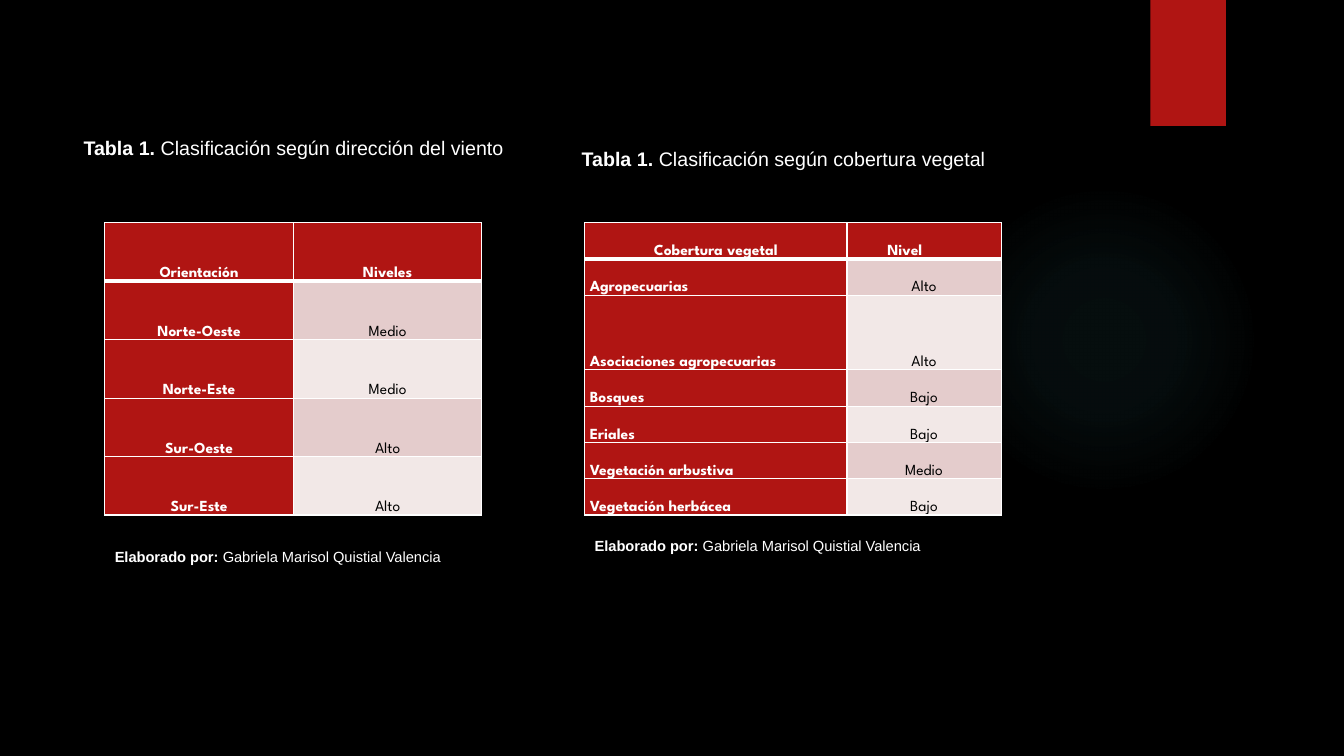
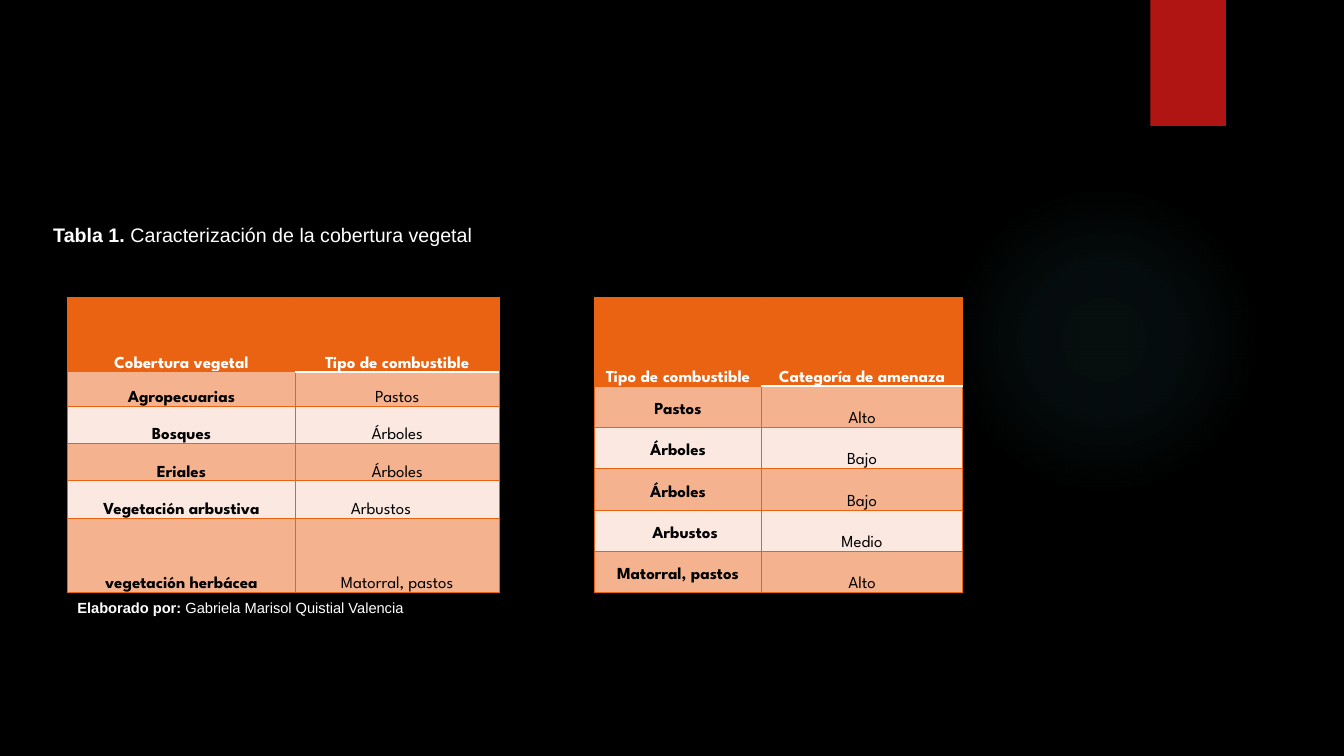
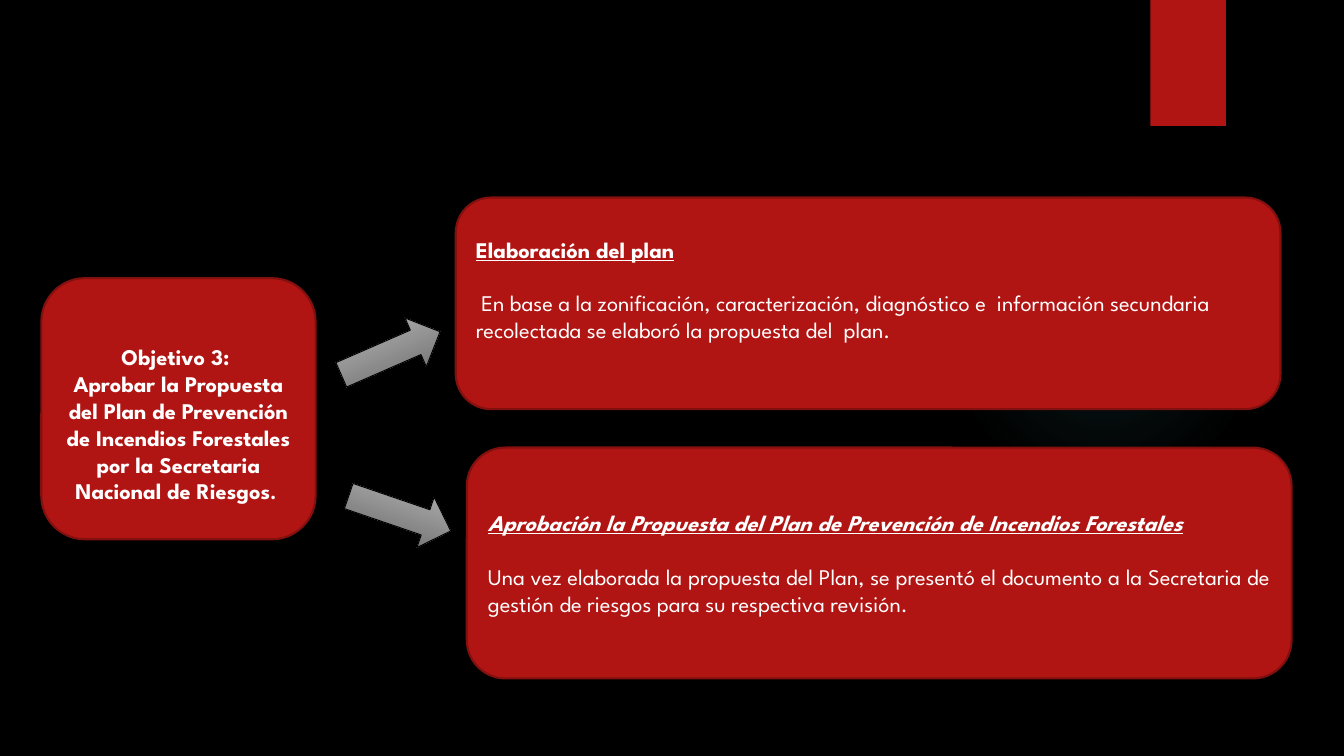
import pptx
import pptx.dml.color
import pptx.enum.shapes
import pptx.enum.text
import pptx.oxml
import pptx.oxml.ns
import pptx.util

PX = 9144  # EMU per px, 100 px to the inch
BLACK, WHITE = "000000", "FFFFFF"
RED, DARK_RED, ORANGE = "B01513", "82100E", "EA6312"
BODY_FONT, CAPTION_FONT = "League Spartan", "Arial"
AUTHOR = "Gabriela Marisol Quistial Valencia"

SHAPE = pptx.enum.shapes.MSO_SHAPE
ALIGN = pptx.enum.text.PP_ALIGN
ANCHOR = pptx.enum.text.MSO_ANCHOR

RED_TABLE = dict(
    header=RED, label_fills=(RED, RED), value_fills=("E4CCCC", "F2E8E7"),
    label_color=WHITE, size=11, border=(WHITE, 1), rule=(WHITE, 3), rule_from=0)
ORANGE_TABLE = dict(
    header=ORANGE, label_fills=("F4B28E", "FBE8E1"),
    value_fills=("F4B28E", "FBE8E1"), label_color=BLACK, size=12,
    border=(ORANGE, 0.75), rule=(WHITE, 1.5), rule_from=1)


def px(n):
    return pptx.util.Emu(round(n * PX))


def rgb(color):
    return pptx.dml.color.RGBColor.from_string(color)


def add_run(p, text, size=16, color=WHITE, font=BODY_FONT, bold=False,
            italic=False, underline=False):
    r = p.add_run()
    r.text = text
    f = r.font
    f.name, f.size, f.color.rgb = font, pptx.util.Pt(size), rgb(color)
    f.bold, f.italic, f.underline = bold, italic, underline


def add_shape(s, kind, x, y, w, h, fill=None, line=None):
    """Add a preset shape; line is (colour, points)."""
    sp = s.shapes.add_shape(kind, px(x), px(y), px(w), px(h))
    sp.shadow.inherit = False
    if fill:
        sp.fill.solid()
        sp.fill.fore_color.rgb = rgb(fill)
    if line:
        sp.line.color.rgb = rgb(line[0])
        sp.line.width = pptx.util.Pt(line[1])
    else:
        sp.line.fill.background()
    return sp


def set_gradient(sp, stops, direction):
    """Fill with (position %, colour, opacity %) stops."""
    gs = "".join(
        f'<a:gs pos="{pos * 1000}"><a:srgbClr val="{color}">'
        f'<a:alpha val="{opacity * 1000}"/></a:srgbClr></a:gs>'
        for pos, color, opacity in stops)
    grad = pptx.oxml.parse_xml(
        f'<a:gradFill {pptx.oxml.ns.nsdecls("a")} rotWithShape="1">'
        f'<a:gsLst>{gs}</a:gsLst>{direction}</a:gradFill>')
    sp.fill.solid()
    solid = sp.element.spPr.find(pptx.oxml.ns.qn("a:solidFill"))
    sp.element.spPr.replace(solid, grad)


def decorate_layout(s):
    """Put the glow and the red band on the layout behind every slide."""
    glow = add_shape(s, SHAPE.OVAL, 941, 183, 308, 308)
    set_gradient(
        glow, [(0, "50B9C1", 7), (36, "50B9C1", 6), (69, "50B9C1", 0)],
        '<a:path path="circle">'
        '<a:fillToRect l="50000" t="50000" r="50000" b="50000"/></a:path>')
    band = add_shape(s, SHAPE.RECTANGLE, 1141, 0, 75, 125, RED)
    for sp in (glow, band):
        s.slide_layout.shapes.element.append(sp.element)


def add_caption(s, x, y, w, h, lead, text, size):
    tf = s.shapes.add_textbox(px(x), px(y), px(w), px(h)).text_frame
    tf.word_wrap = False
    tf.auto_size = pptx.enum.text.MSO_AUTO_SIZE.SHAPE_TO_FIT_TEXT
    p = tf.paragraphs[0]
    add_run(p, lead, size=size, font=CAPTION_FONT, bold=True)
    add_run(p, text, size=size, font=CAPTION_FONT)


def add_title_caption(s, x, y, w, text):
    add_caption(s, x, y, w, 34, "Tabla 1. ", text, 14)


def add_credit(s, x, y):
    add_caption(s, x, y, 350, 28, "Elaborado por:", " " + AUTHOR, 10.5)


def set_borders(cell, **sides):
    """Set all four cell edges, each given as (colour, points)."""
    tc_pr = cell._tc.get_or_add_tcPr()
    for side in "LRTB":
        color, width = sides[side]
        tc_pr.append(pptx.oxml.parse_xml(
            f'<a:ln{side} {pptx.oxml.ns.nsdecls("a")} w="{round(width * 12700)}">'
            f'<a:solidFill><a:srgbClr val="{color}"/></a:solidFill></a:ln{side}>'))


def add_cell(cell, text, style, row, col, align, anchor, indent):
    edge, rule = style["border"], style["rule"]
    ruled = col >= style["rule_from"]
    set_borders(cell, L=edge, R=edge,
                T=rule if ruled and row == 1 else edge,
                B=rule if ruled and row == 0 else edge)
    if row == 0:
        fill, color = style["header"], WHITE
    elif col == 0:
        fill, color = style["label_fills"][(row - 1) % 2], style["label_color"]
    else:
        fill, color = style["value_fills"][(row - 1) % 2], BLACK
    cell.fill.solid()
    cell.fill.fore_color.rgb = rgb(fill)
    cell.vertical_anchor = anchor
    cell.margin_left, cell.margin_right = px(5 + indent), px(5)
    cell.margin_top = cell.margin_bottom = 0
    p = cell.text_frame.paragraphs[0]
    p.alignment = ALIGN.LEFT if indent else align
    p.line_spacing = 1.5
    add_run(p, text, size=style["size"], color=color,
            bold=row == 0 or col == 0)


def add_table(s, x, y, widths, heights, rows, style,
              label_align=ALIGN.CENTER, label_anchor=ANCHOR.BOTTOM, indents=None):
    """Add a table; indents maps (row, column) to a left indent in px."""
    table = s.shapes.add_table(
        len(rows), len(widths), px(x), px(y),
        px(sum(widths)), px(sum(heights))).table
    table.first_row = table.horz_banding = False
    for column, width in zip(table.columns, widths):
        column.width = px(width)
    for i, (height, texts) in enumerate(zip(heights, rows)):
        table.rows[i].height = px(height)
        for j, text in enumerate(texts):
            label = i > 0 and j == 0
            add_cell(table.cell(i, j), text, style, i, j,
                     label_align if label else ALIGN.CENTER,
                     label_anchor if label else ANCHOR.BOTTOM,
                     (indents or {}).get((i, j), 0))


def add_card(s, x, y, w, h, paragraphs, align, gap=0, top=5, bottom=5):
    """Add a rounded box; each paragraph is a list of (text, format) runs."""
    sp = add_shape(s, SHAPE.ROUNDED_RECTANGLE, x, y, w, h, RED, (DARK_RED, 1.5))
    tf = sp.text_frame
    tf.word_wrap = True
    tf.vertical_anchor = ANCHOR.MIDDLE
    tf.margin_top, tf.margin_bottom = px(top), px(bottom)
    for i, runs in enumerate(paragraphs):
        p = tf.add_paragraph() if i else tf.paragraphs[0]
        p.alignment = align
        if i:
            p.space_before = pptx.util.Pt(gap)
        for text, fmt in runs:
            add_run(p, text, **fmt)


def add_arrow(s, x, y, angle):
    sp = add_shape(s, SHAPE.RIGHT_ARROW, x, y, 107, 53, line=(BLACK, 0.75))
    set_gradient(sp, [(0, "C1C1C1", 100), (100, "5E5E5E", 100)],
                 '<a:lin ang="5400000" scaled="0"/>')
    sp.rotation = angle


def build_classification(s):
    add_table(s, 104, 221, [187, 187], [58] * 5, [
        ("Orientación", "Niveles"),
        ("Norte-Oeste", "Medio"),
        ("Norte-Este", "Medio"),
        ("Sur-Oeste", "Alto"),
        ("Sur-Este", "Alto"),
    ], RED_TABLE)
    add_table(s, 580, 221, [260, 153], [36, 36, 74] + [36] * 4, [
        ("Cobertura vegetal", "Nivel"),
        ("Agropecuarias", "Alto"),
        ("Asociaciones agropecuarias", "Alto"),
        ("Bosques", "Bajo"),
        ("Eriales", "Bajo"),
        ("Vegetación arbustiva", "Medio"),
        ("Vegetación herbácea", "Bajo"),
    ], RED_TABLE, label_align=ALIGN.LEFT, indents={(0, 1): 35})
    add_title_caption(s, 73, 130, 439, "Clasificación según dirección del viento")
    add_title_caption(s, 567, 141, 422, "Clasificación según cobertura vegetal")
    add_credit(s, 104, 539)
    add_credit(s, 580, 528)


def build_fuel_types(s):
    add_table(s, 67, 295, [226, 202], [74, 34, 37, 37, 37, 74], [
        ("Cobertura vegetal", "Tipo de combustible"),
        ("Agropecuarias", "Pastos"),
        ("Bosques", "Árboles"),
        ("Eriales", "Árboles"),
        ("Vegetación arbustiva", "Arbustos"),
        ("vegetación herbácea", "Matorral, pastos"),
    ], ORANGE_TABLE, indents={(4, 1): 50})
    add_credit(s, 67, 589)
    add_title_caption(s, 43, 216, 437, "Caracterización de la cobertura vegetal")
    add_table(s, 590, 295, [165, 200], [88] + [41] * 5, [
        ("Tipo de combustible", "Categoría de amenaza"),
        ("Pastos", "Alto"),
        ("Árboles", "Bajo"),
        ("Árboles", "Bajo"),
        ("Arbustos", "Medio"),
        ("Matorral, pastos", "Alto"),
    ], ORANGE_TABLE, label_anchor=ANCHOR.MIDDLE, indents={(4, 0): 52})


def build_objective(s):
    bold = dict(bold=True)
    heading = dict(bold=True, underline=True)
    add_card(s, 41, 276, 272, 259, [
        [("Objetivo 3: ", bold)],
        [("Aprobar la Propuesta del Plan de Prevención de Incendios Forestales "
          "por la Secretaria Nacional de Riesgos", bold),
         (". ", dict(bold=True, size=14))],
    ], ALIGN.CENTER, top=35)
    add_card(s, 463, 444, 818, 229, [
        [("Aprobación la Propuesta del Plan de Prevención de Incendios Forestales",
          dict(heading, italic=True))],
        [("Una vez elaborada la propuesta del Plan, se presentó el documento a la "
          "Secretaria de gestión de riesgos para su respectiva revisión.", {})],
    ], ALIGN.JUSTIFY, gap=19)
    add_card(s, 452, 196, 818, 210, [
        [("Elaboración del plan", heading)],
        [(" En base a la zonificación, caracterización, diagnóstico e  información "
          "secundaria recolectada se elaboró la propuesta del  plan.", {})],
    ], ALIGN.LEFT, gap=19, bottom=32)
    add_arrow(s, 334, 324, 336.4)
    add_arrow(s, 343, 483, 18.9)


def main():
    prs = pptx.Presentation()
    prs.slide_width, prs.slide_height = px(1333), px(750)
    fill = prs.slide_master.background.fill
    fill.solid()
    fill.fore_color.rgb = rgb(BLACK)
    blank = prs.slide_layouts[6]
    builders = (build_classification, build_fuel_types, build_objective)
    slides = [prs.slides.add_slide(blank) for _ in builders]
    decorate_layout(slides[0])
    for s, build in zip(slides, builders):
        build(s)
    prs.save("out.pptx")


if __name__ == "__main__":
    main()
